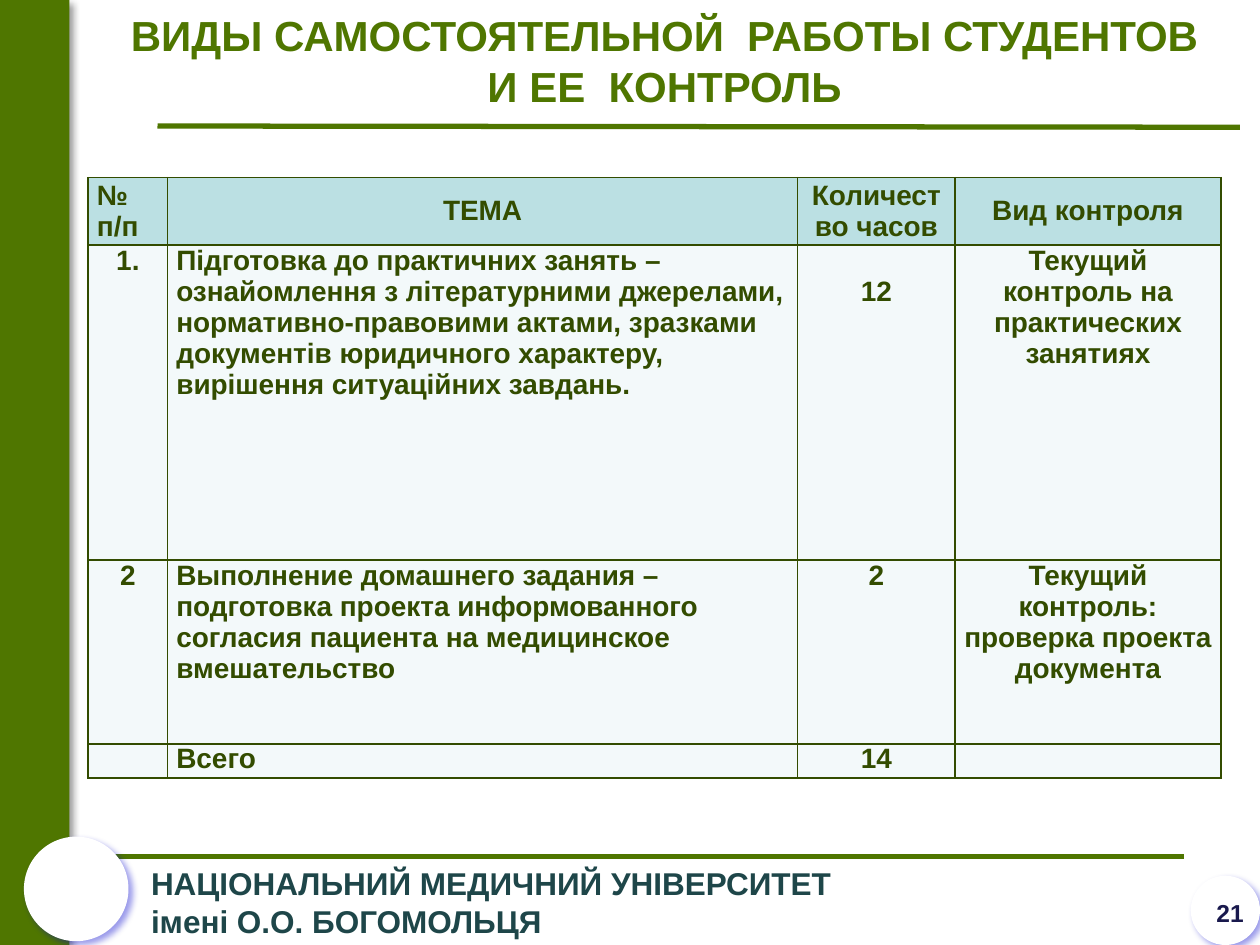
from lxml.etree import SubElement
from pptx import Presentation
from pptx.dml.color import RGBColor
from pptx.enum.shapes import MSO_CONNECTOR, MSO_SHAPE
from pptx.enum.text import MSO_ANCHOR, PP_ALIGN
from pptx.oxml.ns import qn
from pptx.util import Inches, Pt

GREEN = RGBColor(0x4F, 0x76, 0x00)
DARK_GREEN = RGBColor(0x33, 0x4C, 0x00)
TEAL = RGBColor(0x1E, 0x46, 0x49)
NAVY = RGBColor(0x19, 0x19, 0x4D)
BLUE = RGBColor(0x00, 0x00, 0xCC)
BLACK = RGBColor(0x00, 0x00, 0x00)
WHITE = RGBColor(0xFF, 0xFF, 0xFF)
HEADER_FILL = RGBColor(0xBB, 0xE0, 0xE3)
BODY_FILL = RGBColor(0xF3, 0xF9, 0xFA)

LEFT, CENTER, RIGHT = PP_ALIGN.LEFT, PP_ALIGN.CENTER, PP_ALIGN.RIGHT
COLS, ROWS = 100, 75  # grid over the whole slide


class SlideBuilder:
    font = "Arial"
    table_size = 16

    def __init__(self, prs):
        self.s = prs.slides.add_slide(prs.slide_layouts[6])
        self.col = prs.slide_width / COLS
        self.row = prs.slide_height / ROWS

    def x(self, n):
        return round(n * self.col)

    def y(self, n):
        return round(n * self.row)

    def box(self, left, top, width, height):
        return self.x(left), self.y(top), self.x(width), self.y(height)

    def shape(self, kind, at, fill, shadow):
        sp = self.s.shapes.add_shape(kind, *self.box(*at))
        sp.fill.solid()
        sp.fill.fore_color.rgb = fill
        sp.line.fill.background()
        sp.shadow.inherit = False
        effects = sp._element.spPr.find(qn("a:effectLst"))
        outer = SubElement(effects, qn("a:outerShdw"), blurRad=str(Pt(4)), dist=str(Pt(3)),
                           dir=str(45 * 60000), algn="tl", rotWithShape="0")
        color = SubElement(outer, qn("a:srgbClr"), val=str(shadow))
        SubElement(color, qn("a:alpha"), val="40000")

    def rule(self, x1, y1, x2, y2):
        line = self.s.shapes.add_connector(
            MSO_CONNECTOR.STRAIGHT, self.x(x1), self.y(y1), self.x(x2), self.y(y2))
        line.line.color.rgb = GREEN
        line.line.width = Pt(3)
        SubElement(line._element.spPr, qn("a:effectLst"))

    def add_text(self, p, text, size, color, align):
        p.alignment = align
        r = p.add_run()
        r.text = text
        r.font.name = self.font
        r.font.size = Pt(size)
        r.font.bold = True
        r.font.color.rgb = color

    def text_box(self, at, lines, size, color, align=LEFT):
        tf = self.s.shapes.add_textbox(*self.box(*at)).text_frame
        tf.word_wrap = True
        for i, line in enumerate(lines):
            p = tf.add_paragraph() if i else tf.paragraphs[0]
            self.add_text(p, line, size, color, align)

    def border(self, cell):
        props = cell._tc.get_or_add_tcPr()
        for i, side in enumerate(("lnL", "lnR", "lnT", "lnB")):
            ln = props.makeelement(qn(f"a:{side}"), {"w": str(Pt(1))})
            fill = SubElement(ln, qn("a:solidFill"))
            SubElement(fill, qn("a:srgbClr"), val=str(DARK_GREEN))
            props.insert(i, ln)

    def table(self, left, top, widths, heights, rows, aligns):
        at = self.box(left, top, sum(widths), sum(heights))
        table = self.s.shapes.add_table(len(rows), len(widths), *at).table
        for column, width in zip(table.columns, widths):
            column.width = self.x(width)
        for row, height in zip(table.rows, heights):
            row.height = self.y(height)
        for i, values in enumerate(rows):
            for j, value in enumerate(values):
                cell = table.cell(i, j)
                cell.margin_left = cell.margin_right = Inches(0.07)
                cell.margin_top = cell.margin_bottom = 0
                cell.vertical_anchor = MSO_ANCHOR.TOP if i else MSO_ANCHOR.MIDDLE
                cell.fill.solid()
                cell.fill.fore_color.rgb = BODY_FILL if i else HEADER_FILL
                self.border(cell)
                p = cell.text_frame.paragraphs[0]
                if value:
                    align = aligns[j] if i else (CENTER if j else LEFT)
                    self.add_text(p, value, self.table_size, DARK_GREEN, align)
                else:  # keeps the empty cell as low as its row
                    SubElement(p._p, qn("a:endParaRPr"), sz=str(self.table_size * 100))
        return table


def main():
    prs = Presentation()
    prs.slide_width, prs.slide_height = Inches(10), Inches(7.5)
    b = SlideBuilder(prs)

    # Side band and rules
    b.shape(MSO_SHAPE.RECTANGLE, (0, 0, 5.5, 75), GREEN, BLACK)
    b.rule(12.5, 10, 98.4, 10.1)
    b.rule(6.2, 68, 94, 68)

    # Footer: emblem disc, university name, page number
    b.shape(MSO_SHAPE.OVAL, (1.9, 66.4, 8.3, 8.3), WHITE, BLUE)
    b.text_box((11, 68.1, 80.5, 7.1),
               ["НАЦІОНАЛЬНИЙ МЕДИЧНИЙ УНІВЕРСИТЕТ", "імені О.О. БОГОМОЛЬЦЯ"], 18, TEAL)
    b.shape(MSO_SHAPE.OVAL, (94.5, 69.5, 5.5, 5.5), WHITE, BLUE)
    b.text_box((76.4, 70.8, 23.3, 5.2), ["21"], 14, NAVY, RIGHT)

    # Table of independent work
    rows = [
        ("№ п/п", "ТЕМА", "Количество часов", "Вид контроля"),
        ("1.",
         "Підготовка до практичних занять – ознайомлення з літературними джерелами, "
         "нормативно-правовими актами, зразками документів юридичного характеру, "
         "вирішення ситуаційних завдань.",
         "12", "Текущий контроль на практических занятиях"),
        ("2",
         "Выполнение домашнего задания – подготовка проекта информованного "
         "согласия пациента на медицинское вмешательство",
         "2", "Текущий контроль: проверка проекта документа"),
        ("", "Всего", "14", ""),
    ]
    table = b.table(7, 14.1, (6.3, 50, 12.5, 21.1), (5.3, 25, 14.6, 2.7), rows,
                    (CENTER, LEFT, CENTER, CENTER))
    table.cell(1, 2).margin_top = Inches(0.25)  # hours sit one line lower

    # Title
    b.text_box((8.6, 0.3, 88.3, 9.1),
               ["ВИДЫ САМОСТОЯТЕЛЬНОЙ  РАБОТЫ СТУДЕНТОВ", "И ЕЕ  КОНТРОЛЬ"],
               24, GREEN, CENTER)

    prs.save("out.pptx")


if __name__ == "__main__":
    main()
